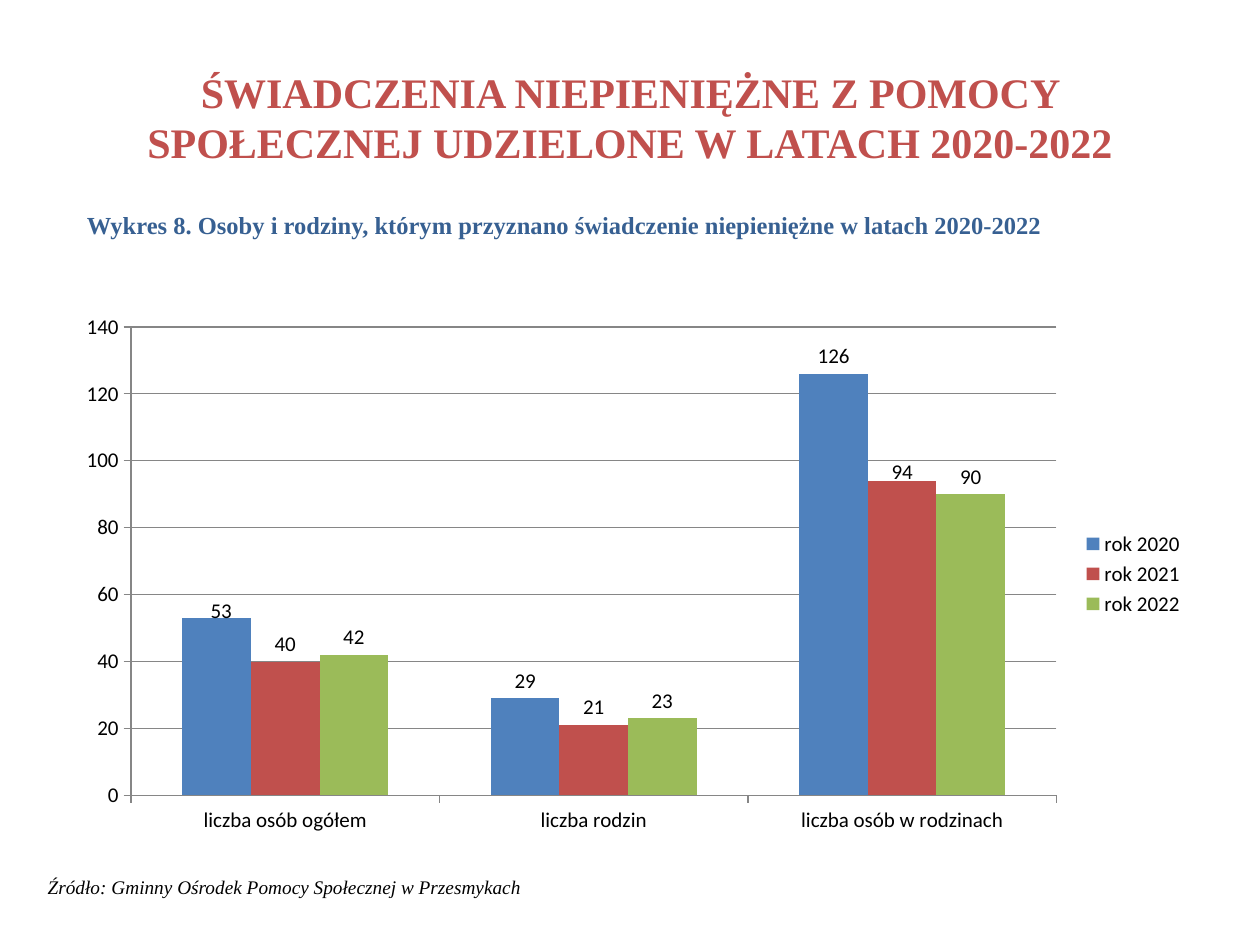
from lxml import etree
from pptx import Presentation
from pptx.chart.data import CategoryChartData
from pptx.dml.color import RGBColor
from pptx.enum.chart import XL_CHART_TYPE, XL_LABEL_POSITION, XL_LEGEND_POSITION, XL_TICK_MARK
from pptx.enum.text import MSO_ANCHOR, PP_ALIGN
from pptx.oxml.ns import qn
from pptx.util import Inches, Pt

COLORS = {
    "title": "C0504D",
    "caption": "376092",
    "text": "000000",
    "grid": "868686",
    "rok 2020": "4F81BD",
    "rok 2021": "C0504D",
    "rok 2022": "9BBB59",
}
CATEGORIES = ["liczba osób ogółem", "liczba rodzin", "liczba osób w rodzinach"]
BENEFITS = {
    "rok 2020": [53, 29, 126],
    "rok 2021": [40, 21, 94],
    "rok 2022": [42, 23, 90],
}
LABEL_SHIFTS = {("rok 2020", 0): (0.004, 0.02), ("rok 2021", 2): (0, 0.016)}


def color(name):
    return RGBColor.from_string(COLORS[name])


def add_text(slide, text, box, *, size, fill, bold=False, italic=False,
             align=PP_ALIGN.LEFT, anchor=MSO_ANCHOR.TOP):
    frame = slide.shapes.add_textbox(*map(Inches, box)).text_frame
    frame.word_wrap = True
    frame.vertical_anchor = anchor
    paragraph = frame.paragraphs[0]
    paragraph.alignment = align
    run = paragraph.add_run()
    run.text = text
    run.font.name = "Times New Roman"
    run.font.size = Pt(size)
    run.font.bold = bold
    run.font.italic = italic
    run.font.color.rgb = color(fill)


def manual_layout(**values):
    layout = etree.Element(qn("c:layout"))
    manual = etree.SubElement(layout, qn("c:manualLayout"))
    for tag, value in values.items():
        etree.SubElement(manual, qn(f"c:{tag}")).set("val", str(value))
    return layout


def style_font(font):
    font.name = "Calibri"
    font.size = Pt(12)
    font.color.rgb = color("text")


def style_axis(axis):
    axis.major_tick_mark = XL_TICK_MARK.OUTSIDE
    axis.minor_tick_mark = XL_TICK_MARK.NONE
    axis.format.line.color.rgb = color("grid")
    axis.format.line.width = Pt(0.75)
    style_font(axis.tick_labels.font)


def style_series(series):
    series.format.fill.solid()
    series.format.fill.fore_color.rgb = color(series.name)
    series.invert_if_negative = False
    labels = series.data_labels
    labels.show_value = True
    labels.position = XL_LABEL_POSITION.OUTSIDE_END
    style_font(labels.font)


def shift_label(series, index, x, y):
    label = series.points[index].data_label
    label.position = XL_LABEL_POSITION.OUTSIDE_END
    style_font(label.font)
    labels = series.data_labels._element
    idx = labels.xpath(f'c:dLbl/c:idx[@val="{index}"]')[0]
    idx.addnext(manual_layout(x=x, y=y))


def add_benefits_chart(slide, box):
    data = CategoryChartData()
    data.categories = CATEGORIES
    for year, counts in BENEFITS.items():
        data.add_series(year, counts)
    chart = slide.shapes.add_chart(
        XL_CHART_TYPE.COLUMN_CLUSTERED, *map(Inches, box), data).chart
    chart.has_title = False
    style_font(chart.font)

    plot = chart.plots[0]
    plot.gap_width = 150
    plot.overlap = 0
    plot.vary_by_categories = False
    for series in plot.series:
        style_series(series)
        for (year, index), shift in LABEL_SHIFTS.items():
            if year == series.name:
                shift_label(series, index, *shift)

    style_axis(chart.category_axis)
    counts_axis = chart.value_axis
    style_axis(counts_axis)
    counts_axis.minimum_scale = 0
    counts_axis.maximum_scale = 140
    counts_axis.major_unit = 20
    counts_axis.has_major_gridlines = True
    gridline = counts_axis.major_gridlines.format.line
    gridline.color.rgb = color("grid")
    gridline.width = Pt(0.75)

    chart.has_legend = True
    chart.legend.position = XL_LEGEND_POSITION.RIGHT
    chart.legend.include_in_layout = False
    style_font(chart.legend.font)

    plot_area = chart._chartSpace.chart.plotArea
    for layout in plot_area.findall(qn("c:layout")):
        plot_area.remove(layout)
    plot_area.insert(0, manual_layout(
        layoutTarget="inner", xMode="edge", yMode="edge",
        x=0.059, y=0.043, w=0.817, h=0.867))


def main():
    presentation = Presentation()
    presentation.slide_width = Inches(10)
    presentation.slide_height = Inches(7.5)
    slide = presentation.slides.add_slide(presentation.slide_layouts[6])

    add_text(slide, "ŚWIADCZENIA NIEPIENIĘŻNE Z POMOCY SPOŁECZNEJ UDZIELONE W LATACH 2020-2022",
             (0.5, 0.3, 9, 1.25), size=24, fill="title", bold=True,
             align=PP_ALIGN.CENTER, anchor=MSO_ANCHOR.MIDDLE)
    add_text(slide, "Wykres 8. Osoby i rodziny, którym przyznano świadczenie niepieniężne w latach 2020-2022",
             (0.59, 1.62, 8.99, 0.5), size=14, fill="caption", bold=True)
    add_benefits_chart(slide, (0.51, 2.41, 8.99, 4.29))
    add_text(slide, "Źródło: Gminny Ośrodek Pomocy Społecznej w Przesmykach",
             (0.28, 6.9, 5, 0.29), size=11, fill="text", italic=True)

    presentation.save("out.pptx")


if __name__ == "__main__":
    main()
